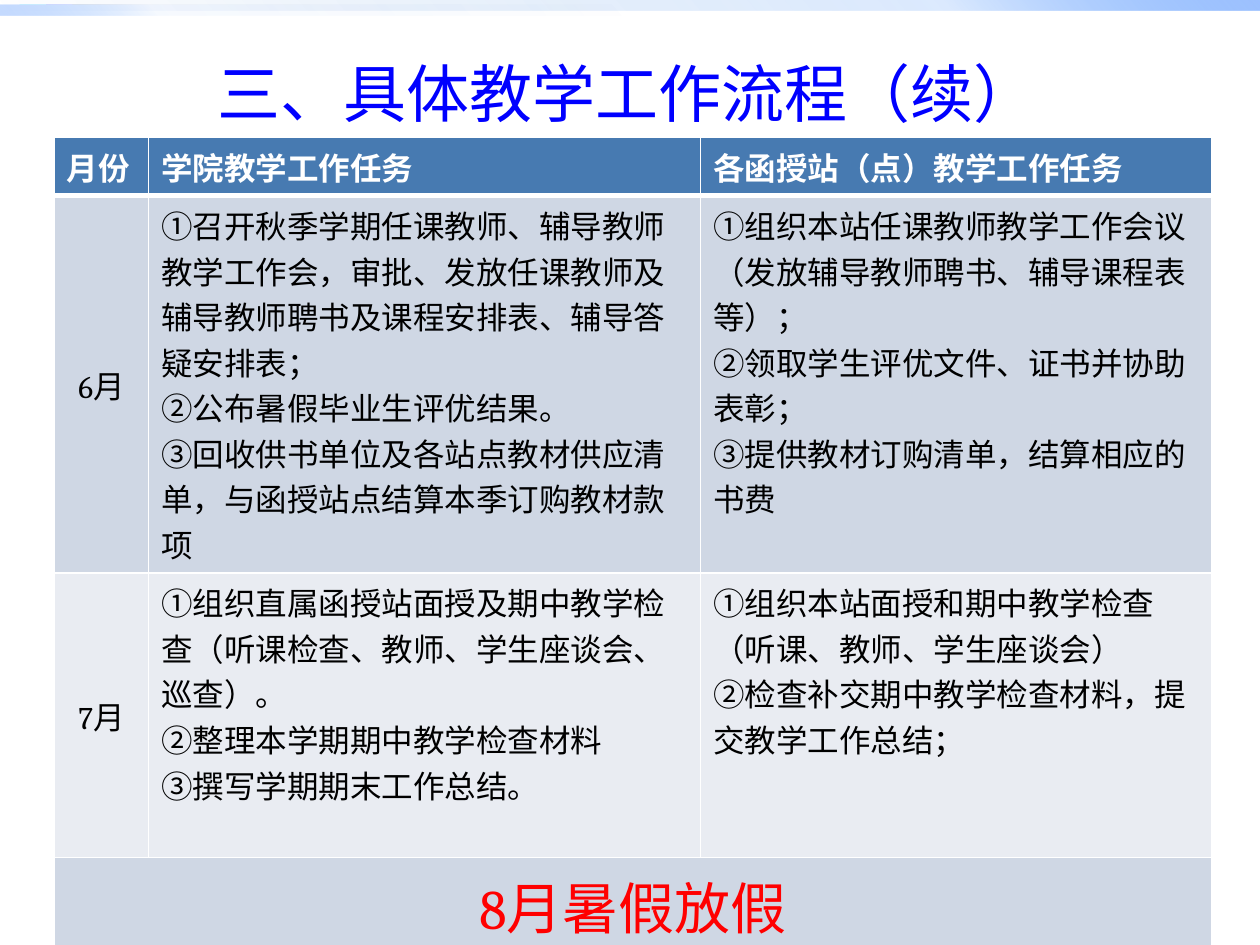
from pptx import Presentation
from pptx.dml.color import RGBColor
from pptx.enum.shapes import MSO_SHAPE
from pptx.enum.text import MSO_ANCHOR, PP_ALIGN, MSO_AUTO_SIZE
from pptx.oxml import parse_xml
from pptx.oxml.ns import nsdecls, qn
from pptx.util import Inches, Pt

SERIF, SANS = "Cambria", "Noto Sans CJK SC"
WHITE = RGBColor(0xFF, 0xFF, 0xFF)
BLACK = RGBColor(0x00, 0x00, 0x00)
BLUE = RGBColor(0x00, 0x00, 0xFF)
RED = RGBColor(0xFF, 0x00, 0x00)
HEADER_FILL = RGBColor(0x47, 0x7A, 0xB1)
DARK_BAND = RGBColor(0xCF, 0xD7, 0xE4)
LIGHT_BAND = RGBColor(0xE9, 0xEC, 0xF2)
DEEP_BLUE = RGBColor(0x00, 0x58, 0xB7)
MID_BLUE = RGBColor(0x4F, 0x95, 0xFF)
PALE_BLUE = RGBColor(0x9E, 0xC2, 0xFF)

COLUMN_WIDTHS = [0.75, 4.38, 4.06]
ROW_HEIGHTS = [0.35, 2.02, 2.26, 0.56]
HEADERS = ["月份", "学院教学工作任务", "各函授站（点）教学工作任务"]
MONTHS = [
    ("6月",
     ["①召开秋季学期任课教师、辅导教师教学工作会，审批、发放任课教师及辅导教师聘书及课程安排表、辅导答疑安排表；\n"
      "②公布暑假毕业生评优结果。",
      "③回收供书单位及各站点教材供应清单，与函授站点结算本季订购教材款项"],
     ["①组织本站任课教师教学工作会议（发放辅导教师聘书、辅导课程表等）；",
      "②领取学生评优文件、证书并协助表彰；",
      "③提供教材订购清单，结算相应的书费"]),
    ("7月",
     ["①组织直属函授站面授及期中教学检查（听课检查、教师、学生座谈会、巡查）。\n"
      "②整理本学期期中教学检查材料",
      "③撰写学期期末工作总结。"],
     ["①组织本站面授和期中教学检查（听课、教师、学生座谈会）",
      "②检查补交期中教学检查材料，提交教学工作总结；"]),
]
HOLIDAY = "8月暑假放假"


def add_run(paragraph, text, size, color, name, bold=False):
    run = paragraph.add_run()
    run.text = text
    font = run.font
    font.size, font.bold, font.name = Pt(size), bold, name
    font.color.rgb = color
    font._element.find(qn("a:latin")).addnext(
        parse_xml(f'<a:ea {nsdecls("a")} typeface="{SANS}"/>'))


def add_gradient_bar(slide, box, angle, opacities):
    """Top bar fading from clear to pale blue."""
    bar = slide.shapes.add_shape(MSO_SHAPE.RECTANGLE, *box)
    bar.shadow.inherit = False
    bar.line.fill.background()
    stops = "".join(
        f'<a:gs pos="{position * 1000}"><a:srgbClr val="{color}">'
        f'<a:alpha val="{opacity * 1000}"/></a:srgbClr></a:gs>'
        for position, color, opacity in zip(
            (0, 75, 100), (DEEP_BLUE, MID_BLUE, PALE_BLUE), opacities))
    bar._element.spPr.find(qn("a:prstGeom")).addnext(parse_xml(
        f'<a:gradFill {nsdecls("a")}><a:gsLst>{stops}</a:gsLst>'
        f'<a:lin ang="{angle * 60000}" scaled="0"/></a:gradFill>'))


def place_title(slide, box):
    title = slide.shapes.title
    title.left, title.top, title.width, title.height = box
    frame = title.text_frame
    frame.auto_size = MSO_AUTO_SIZE.NONE
    frame.vertical_anchor = MSO_ANCHOR.MIDDLE
    paragraph = frame.paragraphs[0]
    paragraph.alignment = PP_ALIGN.CENTER
    add_run(paragraph, "三、具体教学工作流程（续）", 36, BLUE, SANS)


def style_cell(cell, fill, top=1, bottom=1):
    cell.fill.solid()
    cell.fill.fore_color.rgb = fill
    properties = cell._tc.get_or_add_tcPr()
    for index, (side, width) in enumerate(zip("LRTB", (1, 1, top, bottom))):
        properties.insert(index, parse_xml(
            f'<a:ln{side} {nsdecls("a")} w="{Pt(width)}"><a:solidFill>'
            f'<a:srgbClr val="{WHITE}"/></a:solidFill></a:ln{side}>'))


def fill_centered(cell, text, size, color):
    cell.vertical_anchor = MSO_ANCHOR.MIDDLE
    paragraph = cell.text_frame.paragraphs[0]
    paragraph.alignment = PP_ALIGN.CENTER
    add_run(paragraph, text, size, color, SERIF)


def fill_tasks(cell, tasks, name):
    """Numbered tasks: a sans marker, then text in the column's font."""
    frame = cell.text_frame
    for index, task in enumerate(tasks):
        paragraph = frame.add_paragraph() if index else frame.paragraphs[0]
        for number, line in enumerate(task.split("\n")):
            if number:
                paragraph.add_line_break()
            if name == SANS:
                add_run(paragraph, line, 18, BLACK, SANS)
            else:
                add_run(paragraph, line[0], 18, BLACK, SANS)
                add_run(paragraph, line[1:], 18, BLACK, name)


def add_schedule(slide, left, top):
    table = slide.shapes.add_table(
        len(ROW_HEIGHTS), len(COLUMN_WIDTHS), left, top,
        Inches(sum(COLUMN_WIDTHS)), Inches(sum(ROW_HEIGHTS))).table
    for column, width in zip(table.columns, COLUMN_WIDTHS):
        column.width = Inches(width)
    for row, height in zip(table.rows, ROW_HEIGHTS):
        row.height = Inches(height)

    # Fills and borders, with a thick rule under the header
    fills = [HEADER_FILL, DARK_BAND, LIGHT_BAND, DARK_BAND]
    for index, (row, fill) in enumerate(zip(table.rows, fills)):
        for cell in row.cells:
            style_cell(cell, fill, top=3 if index == 1 else 1,
                       bottom=3 if index == 0 else 1)

    # Header row
    for cell, text in zip(table.rows[0].cells, HEADERS):
        add_run(cell.text_frame.paragraphs[0], text, 18, WHITE, SERIF, True)

    # Month rows
    for index, (month, college, station) in enumerate(MONTHS, start=1):
        fill_centered(table.cell(index, 0), month, 18, BLACK)
        fill_tasks(table.cell(index, 1), college, SANS)
        fill_tasks(table.cell(index, 2), station, SERIF)

    # Holiday row across all columns
    last = len(ROW_HEIGHTS) - 1
    holiday = table.cell(last, 0)
    holiday.merge(table.cell(last, len(COLUMN_WIDTHS) - 1))
    fill_centered(holiday, HOLIDAY, 32, RED)


def main():
    presentation = Presentation()
    presentation.slide_width, presentation.slide_height = Inches(10), Inches(7.5)
    width = presentation.slide_width
    slide = presentation.slides.add_slide(presentation.slide_layouts[5])
    bar_height = Inches(0.08)
    add_gradient_bar(slide, (0, 0, width, bar_height), 315, (0, 20, 100))
    add_gradient_bar(slide, (0, bar_height // 2, width // 2, bar_height),
                     135, (0, 5, 60))
    place_title(slide, (Inches(0.5), Inches(0.3), Inches(8.95), Inches(0.87)))
    add_schedule(slide, Inches(0.43), Inches(1.09))
    presentation.save("out.pptx")


if __name__ == "__main__":
    main()
